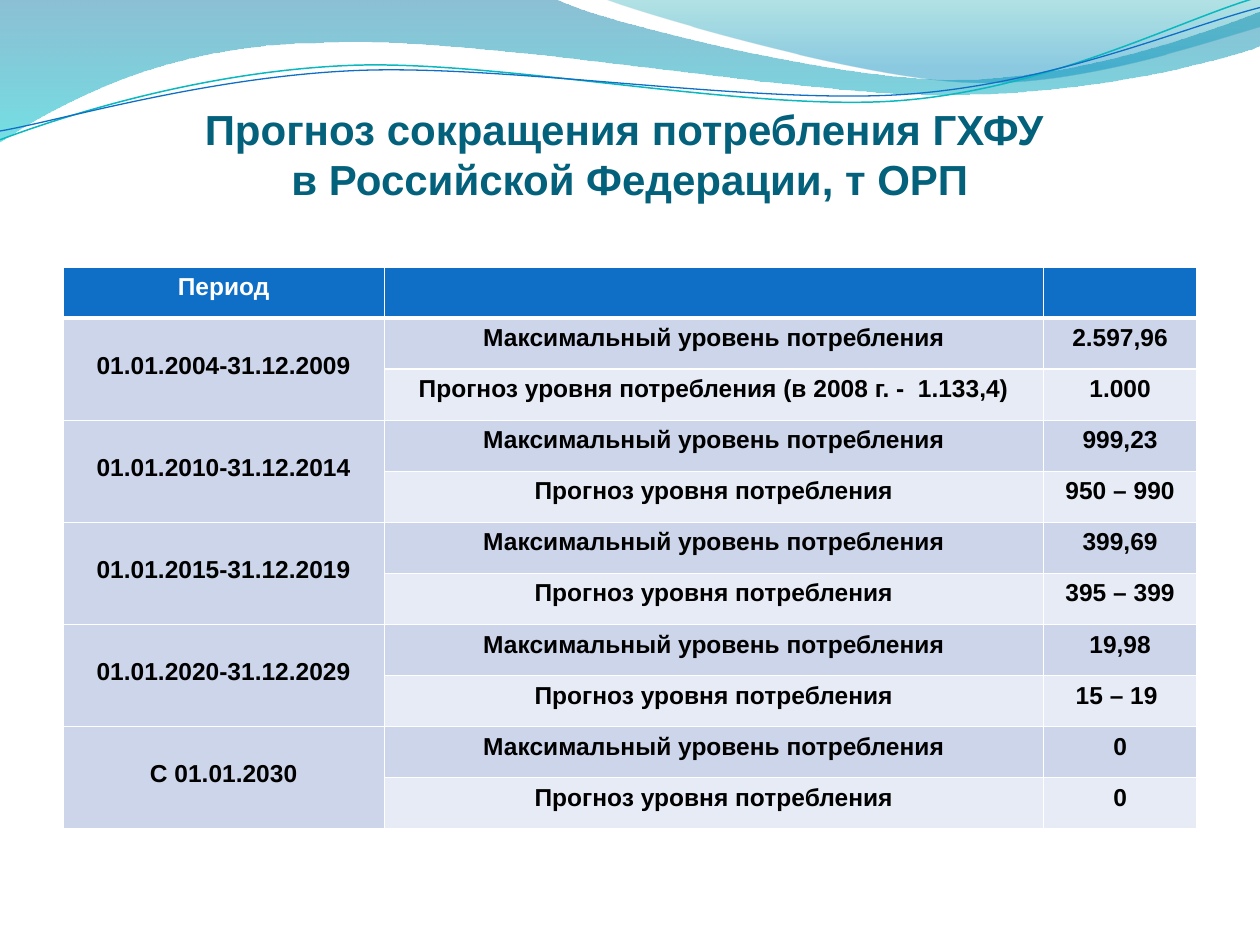
from dataclasses import dataclass

from lxml import etree
from pptx import Presentation
from pptx.dml.color import RGBColor
from pptx.enum.text import MSO_ANCHOR, PP_ALIGN
from pptx.oxml.ns import qn
from pptx.util import Inches, Pt

CENTER = PP_ALIGN.CENTER
BOTTOM = MSO_ANCHOR.BOTTOM
TOP = MSO_ANCHOR.TOP


@dataclass(frozen=True)
class Theme:
    font: str = "Arial"
    title_size: int = 24
    table_size: int = 14
    title: str = "04617B"
    header: str = "0F6FC6"
    header_text: str = "FFFFFF"
    body_text: str = "000000"
    border: str = "FFFFFF"
    maximum_row: str = "CCD5EA"
    forecast_row: str = "E7EBF5"
    teal_line: str = "0AB8BF"
    blue_line: str = "0F6FC6"
    wide_wave: tuple = ((0, "0074A1", 45), (1, "00C6CF", 55))
    right_wave: tuple = ((0, "00A1A9", 30), (0.8, "008BBF", 45))


THEME = Theme()

WIDE_WAVE = [
    [(0, -0.01)],
    [(4.4, -0.01)],
    [(4.76, 0.17), (6.64, 0.63), (7.58, 0.63)],
    [(8.53, 0.63), (9.58, 0.26), (10, 0.09)],
    [(10.01, 0.36)],
    [(9.83, 0.44), (8.7, 0.76), (7.46, 0.75)],
    [(6.22, 0.75), (3.82, 0.28), (2.57, 0.34)],
    [(1.29, 0.35), (0.46, 0.83), (-0.01, 1.13)],
    [(0, -0.01)],
]
RIGHT_WAVE = [
    [(4.79, -0.01)],
    [(5.09, 0.11), (6.82, 0.62), (7.69, 0.65)],
    [(8.56, 0.69), (9.61, 0.32), (10, 0.21)],
    [(10, 0)],
    [(4.79, -0.01)],
]
TEAL_CURVE = [
    [(0, 1.11)],
    [(0.48, 0.93), (1.58, 0.57), (2.77, 0.52)],
    [(3.95, 0.47), (5.93, 0.89), (7.13, 0.8)],
    [(8.33, 0.71), (9.38, 0.15), (9.98, -0.02)],
]
BLUE_CURVE = [
    [(0, 1.04)],
    [(0.47, 0.96), (1.64, 0.61), (2.83, 0.56)],
    [(4.03, 0.51), (5.97, 0.83), (7.17, 0.75)],
    [(8.36, 0.67), (9.41, 0.21), (10, 0.06)],
]

TITLE = "Прогноз сокращения потребления ГХФУ \vв Российской Федерации, т ОРП"
MAXIMUM = "Максимальный уровень потребления"
FORECAST = "Прогноз уровня потребления"
PERIODS = [
    ("01.01.2004-31.12.2009", "2.597,96", "1.000", " (в 2008 г. -  1.133,4)"),
    ("01.01.2010-31.12.2014", "999,23", "950 – 990", ""),
    ("01.01.2015-31.12.2019", "399,69", "395 – 399", ""),
    ("01.01.2020-31.12.2029", "19,98", "15 – 19 ", ""),
    ("С 01.01.2030", "0", "0", ""),
]


def color(value):
    return RGBColor.from_string(value)


def add_outline(page, segments, close):
    ends = [(Inches(x), Inches(y)) for x, y in (points[-1] for points in segments)]
    builder = page.shapes.build_freeform(*ends[0])
    builder.add_line_segments(ends[1:], close=close)
    shape = builder.convert_to_shape()
    shape.shadow.inherit = False
    lines = list(shape.element.spPr.iter(qn("a:lnTo")))
    for line, points in zip(lines, segments[1:]):
        if len(points) == 3:
            line.getparent().replace(line, bezier_node(shape, points))
    return shape


def bezier_node(shape, points):
    node = etree.Element(qn("a:cubicBezTo"))
    for x, y in points:
        point = etree.SubElement(node, qn("a:pt"))
        point.set("x", str(Inches(x) - shape.left))
        point.set("y", str(Inches(y) - shape.top))
    return node


def add_wave(page, segments, stops):
    shape = add_outline(page, segments, True)
    shape.line.fill.background()
    shape.fill.gradient()
    shape.fill.gradient_angle = 270
    for stop, (position, value, _) in zip(shape.fill.gradient_stops, stops):
        stop.position = position
        stop.color.rgb = color(value)
    for node, (_, _, opacity) in zip(shape.element.spPr.iter(qn("a:srgbClr")), stops):
        etree.SubElement(node, qn("a:alpha")).set("val", str(opacity * 1000))


def add_curve(page, segments, value, width):
    shape = add_outline(page, segments, False)
    shape.fill.background()
    shape.line.color.rgb = color(value)
    shape.line.width = Pt(width)


def write(frame, text, size, value):
    para = frame.paragraphs[0]
    para.text = text
    para.alignment = CENTER
    para.font.name = THEME.font
    para.font.size = Pt(size)
    para.font.bold = True
    para.font.color.rgb = color(value)


def add_title(page):
    box = page.shapes.add_textbox(Inches(0.5), Inches(0.77), Inches(9), Inches(1.25))
    frame = box.text_frame
    frame.word_wrap = True
    frame.vertical_anchor = BOTTOM
    frame.margin_left = frame.margin_right = 0
    frame.margin_bottom = Inches(0.4)
    write(frame, TITLE, THEME.title_size, THEME.title)


def set_borders(cell, top_width, bottom_width):
    properties = cell._tc.get_or_add_tcPr()
    widths = {"lnL": 1, "lnR": 1, "lnT": top_width, "lnB": bottom_width}
    for index, (side, width) in enumerate(widths.items()):
        line = etree.Element(qn("a:" + side), w=str(Pt(width)))
        fill = etree.SubElement(line, qn("a:solidFill"))
        etree.SubElement(fill, qn("a:srgbClr"), val=THEME.border)
        properties.insert(index, line)


def fill_row(table, index, texts, fill, text_color):
    for cell, text in zip(table.rows[index].cells, texts):
        cell.fill.solid()
        cell.fill.fore_color.rgb = color(fill)
        cell.vertical_anchor = TOP
        set_borders(cell, 3 if index == 1 else 1, 3 if index == 0 else 1)
        if text:
            write(cell.text_frame, text, THEME.table_size, text_color)


def add_forecast_table(page):
    row_count = 1 + 2 * len(PERIODS)
    table = page.shapes.add_table(
        row_count, 3, Inches(0.5), Inches(2.12), Inches(9), Inches(4.46)
    ).table
    for column, width in zip(table.columns, (2.55, 5.23, 1.22)):
        column.width = Inches(width)
    fill_row(table, 0, ("Период", "", ""), THEME.header, THEME.header_text)
    for number, (period, maximum, forecast, note) in enumerate(PERIODS):
        top = 1 + 2 * number
        fill_row(table, top, (period, MAXIMUM, maximum),
                 THEME.maximum_row, THEME.body_text)
        fill_row(table, top + 1, ("", FORECAST + note, forecast),
                 THEME.forecast_row, THEME.body_text)
        period_cell = table.cell(top, 0)
        period_cell.merge(table.cell(top + 1, 0))
        period_cell.margin_top = Inches(0.27)


def main():
    deck = Presentation()
    deck.slide_width = Inches(10)
    deck.slide_height = Inches(7.5)
    page = deck.slides.add_slide(deck.slide_layouts[6])
    add_wave(page, WIDE_WAVE, THEME.wide_wave)
    add_wave(page, RIGHT_WAVE, THEME.right_wave)
    add_curve(page, TEAL_CURVE, THEME.teal_line, 0.85)
    add_curve(page, BLUE_CURVE, THEME.blue_line, 0.75)
    add_title(page)
    add_forecast_table(page)
    deck.save("out.pptx")


if __name__ == "__main__":
    main()
